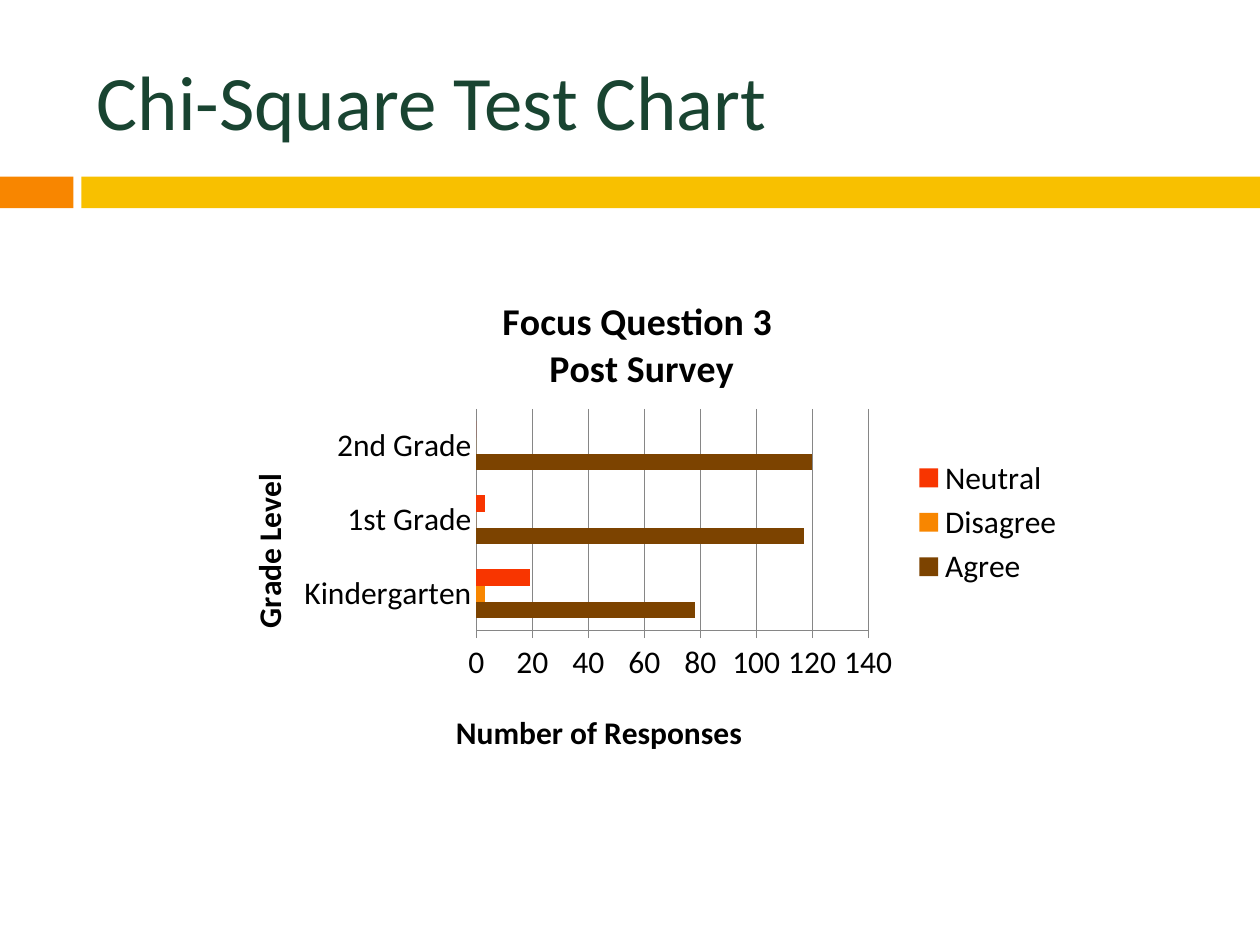
from dataclasses import dataclass

from lxml.etree import SubElement
from pptx import Presentation
from pptx.chart.data import CategoryChartData
from pptx.dml.color import RGBColor
from pptx.enum.chart import XL_CHART_TYPE as ChartType
from pptx.enum.chart import XL_LEGEND_POSITION as LegendPosition
from pptx.enum.chart import XL_TICK_MARK as TickMark
from pptx.enum.shapes import MSO_SHAPE as ShapeType
from pptx.enum.text import MSO_ANCHOR as Anchor
from pptx.enum.text import PP_ALIGN as Align
from pptx.oxml.ns import qn
from pptx.util import Pt


@dataclass(frozen=True)
class Theme:
    font: str = "Calibri"
    title_size: float = 44
    chart_title_size: float = 21.6
    chart_size: float = 18
    title: str = "194431"
    text: str = "000000"
    orange: str = "F88600"
    yellow: str = "F8C000"
    brown: str = "7C4300"
    red: str = "F83500"
    line: str = "868686"


def write_text(frame, text, *, font, size, color, bold=False, align=None):
    """Fill a text frame, one paragraph for each line of text."""
    frame.text = text
    for paragraph in frame.paragraphs:
        paragraph.alignment = align
        for run in paragraph.runs:
            run.font.name = font
            run.font.size = Pt(size)
            run.font.bold = bold
            run.font.color.rgb = RGBColor.from_string(color)


def place(parent, following, inner=False, **fractions):
    """Put a manual layout, in fractions of the chart, before a child."""
    for old in parent.findall(qn("c:layout")):
        parent.remove(old)
    layout = SubElement(parent, qn("c:layout"))
    successor = parent.find(qn(following))
    if successor is not None:
        successor.addprevious(layout)
    manual = SubElement(layout, qn("c:manualLayout"))
    if inner:
        SubElement(manual, qn("c:layoutTarget")).set("val", "inner")
    for mode in ("xMode", "yMode"):
        SubElement(manual, qn(f"c:{mode}")).set("val", "edge")
    for name, value in fractions.items():
        SubElement(manual, qn(f"c:{name}")).set("val", str(value))


class SlideBuilder:
    def __init__(self, presentation, theme):
        self.theme = theme
        self.slide = presentation.slides.add_slide(presentation.slide_layouts[5])

    def title(self, text, left, top, width, height):
        shape = self.slide.shapes.title
        shape.left, shape.top = Pt(left), Pt(top)
        shape.width, shape.height = Pt(width), Pt(height)
        shape.text_frame.vertical_anchor = Anchor.MIDDLE
        write_text(shape.text_frame, text, font=self.theme.font,
                   size=self.theme.title_size, color=self.theme.title,
                   align=Align.LEFT)

    def bar(self, left, top, width, height, color):
        shape = self.slide.shapes.add_shape(
            ShapeType.RECTANGLE, Pt(left), Pt(top), Pt(width), Pt(height))
        shape.shadow.inherit = False
        shape.fill.solid()
        shape.fill.fore_color.rgb = RGBColor.from_string(color)
        shape.line.fill.background()

    def axis(self, axis, title, tick, x, y):
        write_text(axis.axis_title.text_frame, title, font=self.theme.font,
                   size=self.theme.chart_size, color=self.theme.text, bold=True)
        place(axis.axis_title._element, "c:overlay", x=x, y=y)
        axis.major_tick_mark = tick
        axis.minor_tick_mark = TickMark.NONE
        self.thin_line(axis.format.line)

    def thin_line(self, line):
        line.width = Pt(0.75)
        line.color.rgb = RGBColor.from_string(self.theme.line)

    def bar_chart(self, title, categories, series, left, top, width, height):
        data = CategoryChartData()
        data.categories = categories
        for name, values, _ in series:
            data.add_series(name, values)
        chart = self.slide.shapes.add_chart(
            ChartType.BAR_CLUSTERED, Pt(left), Pt(top), Pt(width), Pt(height),
            data).chart
        chart.font.name = self.theme.font
        chart.font.size = Pt(self.theme.chart_size)
        chart.font.color.rgb = RGBColor.from_string(self.theme.text)
        write_text(chart.chart_title.text_frame, title, font=self.theme.font,
                   size=self.theme.chart_title_size, color=self.theme.text,
                   bold=True)
        chart.chart_title.include_in_layout = False

        # Series
        plot = chart.plots[0]
        plot.gap_width = 150
        plot.vary_by_categories = False
        for item, (_, _, color) in zip(plot.series, series):
            item.format.fill.solid()
            item.format.fill.fore_color.rgb = RGBColor.from_string(color)

        # Axes and plot area
        self.axis(chart.category_axis, "Grade Level", TickMark.NONE, 0.04, 0.39)
        self.axis(chart.value_axis, "Number of Responses", TickMark.OUTSIDE,
                  0.28, 0.87)
        chart.value_axis.minimum_scale = 0
        chart.value_axis.maximum_scale = 140
        chart.value_axis.major_unit = 20
        self.thin_line(chart.value_axis.major_gridlines.format.line)
        place(chart._chartSpace.chart.plotArea, "c:barChart", inner=True,
              x=0.31, y=0.27, w=0.45, h=0.45)

        # Legend
        chart.has_legend = True
        chart.legend.position = LegendPosition.RIGHT
        chart.legend.include_in_layout = False


def main():
    theme = Theme()
    presentation = Presentation()
    presentation.slide_width, presentation.slide_height = Pt(720), Pt(540)
    builder = SlideBuilder(presentation, theme)

    # Title and the two-part band below it
    builder.bar(0, 101, 42, 18, theme.orange)
    builder.bar(46.5, 101, 673.5, 18, theme.yellow)
    builder.title("Chi-Square Test Chart", 48, 18, 642, 78)

    # Survey results
    builder.bar_chart(
        "Focus Question 3 \nPost Survey",
        ["Kindergarten", "1st Grade", "2nd Grade"],
        [("Agree", (78, 117, 120), theme.brown),
         ("Disagree", (3, 0, 0), theme.orange),
         ("Neutral", (19, 3, 0), theme.red)],
        118, 157.5, 497.5, 282)
    presentation.save("out.pptx")


if __name__ == "__main__":
    main()
